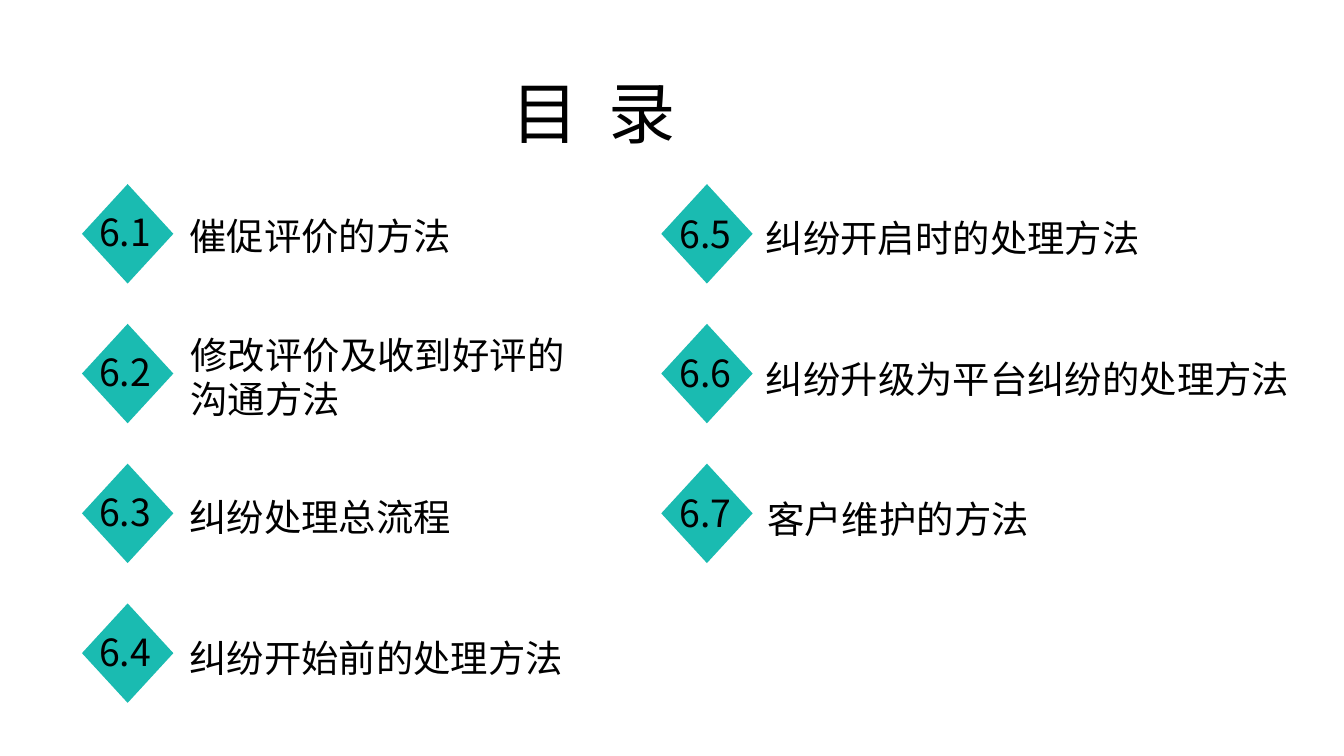
from dataclasses import dataclass

from pptx import Presentation
from pptx.dml.color import RGBColor
from pptx.enum.shapes import MSO_SHAPE
from pptx.enum.text import MSO_AUTO_SIZE
from pptx.oxml.ns import qn
from pptx.util import Inches, Pt


@dataclass(frozen=True)
class Theme:
    font: str = "Noto Sans CJK SC"
    ink: RGBColor = RGBColor(0x00, 0x00, 0x00)
    accent: RGBColor = RGBColor(0x1A, 0xBB, 0xB1)
    title_size: int = 36
    entry_size: int = 20


class ContentsSlide:
    def __init__(self, slide, theme):
        self.slide = slide
        self.theme = theme

    def diamond(self, left, top, width, height):
        shape = self.slide.shapes.add_shape(
            MSO_SHAPE.DIAMOND, Inches(left), Inches(top), Inches(width), Inches(height))
        shape.shadow.inherit = False
        shape.fill.solid()
        shape.fill.fore_color.rgb = self.theme.accent
        shape.line.fill.background()

    def text(self, runs, left, top, width, height, size):
        """Each run is a pair: its text and its letter spacing in points."""
        shape = self.slide.shapes.add_textbox(
            Inches(left), Inches(top), Inches(width), Inches(height))
        frame = shape.text_frame
        frame.word_wrap = True
        frame.auto_size = MSO_AUTO_SIZE.SHAPE_TO_FIT_TEXT
        paragraph = frame.paragraphs[0]
        for content, spacing in runs:
            run = paragraph.add_run()
            run.text = content
            run.font.name = self.theme.font
            run.font.size = Pt(size)
            run.font.color.rgb = self.theme.ink
            properties = run._r.get_or_add_rPr()
            east_asian = properties.makeelement(
                qn("a:ea"), {"typeface": self.theme.font})
            properties.find(qn("a:latin")).addnext(east_asian)
            if spacing:
                properties.set("spc", str(spacing * 100))

    def number(self, content, left, top):
        self.text([(content, 0)], left, top, 0.63, 0.44, self.theme.entry_size)

    def label(self, content, left, top, width, height):
        self.text([(content, 0)], left, top, width, height, self.theme.entry_size)


FIRST_TOP, ROW_STEP = 1.37, 1.04

# Columns: diamond left, number offsets from the diamond, and labels
# Labels: text, left, offset from the diamond top, width, height
COLUMNS = [
    (0.61, 0.03, 0.14, [
        ("催促评价的方法", 1.31, 0.17, 3.48, 0.44),
        ("修改评价及收到好评的沟通方法", 1.32, 0.01, 3.14, 0.77),
        ("纠纷处理总流程", 1.31, 0.18, 3.48, 0.44),
        ("纠纷开始前的处理方法", 1.31, 0.19, 3.48, 0.44),
    ]),
    (4.92, 0.04, 0.15, [
        ("纠纷开启时的处理方法", 5.6, 0.18, 3.83, 0.44),
        ("纠纷升级为平台纠纷的处理方法", 5.6, 0.19, 4.12, 0.44),
        ("客户维护的方法", 5.61, 0.19, 3.86, 0.44),
    ]),
]


def main():
    # A 16:9 page
    presentation = Presentation()
    presentation.slide_width = Inches(10)
    presentation.slide_height = Inches(10) * 9 // 16
    theme = Theme()
    contents = ContentsSlide(
        presentation.slides.add_slide(presentation.slide_layouts[6]), theme)

    # Title, with a widened space between its two characters
    contents.text([("目", 0), (" ", 8), ("录", 0)], 3.71, 0.48, 2.05, 0.71, theme.title_size)

    # Numbered entries, counted down each column in turn
    number = 1
    for left, number_shift, number_drop, labels in COLUMNS:
        for row, (label, label_left, label_drop, width, height) in enumerate(labels):
            top = FIRST_TOP + row * ROW_STEP
            contents.diamond(left, top, 0.68, 0.74)
            contents.number(f"6.{number}", left + number_shift, top + number_drop)
            contents.label(label, label_left, top + label_drop, width, height)
            number += 1

    presentation.save("out.pptx")


if __name__ == "__main__":
    main()
